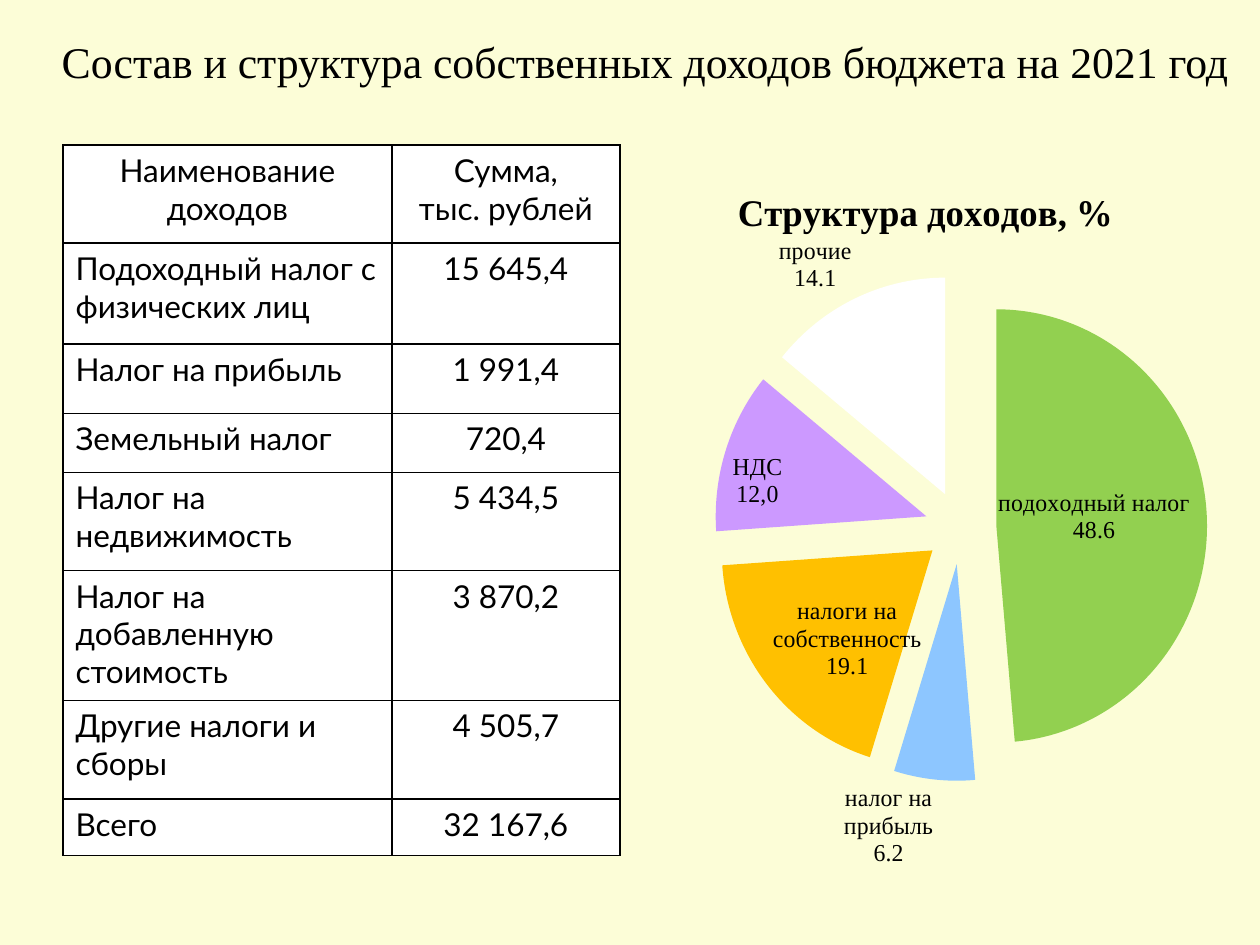
"""Build a slide with the own-revenue table and a pie of its structure."""
from lxml.etree import SubElement
from pptx import Presentation
from pptx.chart.data import CategoryChartData
from pptx.dml.color import RGBColor
from pptx.enum.chart import XL_CHART_TYPE as ChartType, XL_LABEL_POSITION as LabelPosition
from pptx.enum.text import MSO_ANCHOR as Anchor, PP_ALIGN as Align
from pptx.oxml.ns import qn
from pptx.util import Inches, Pt

TITLE = "Состав и структура собственных доходов бюджета на 2021 год"
ROWS = [
    ("Наименование доходов", "Сумма,\nтыс. рублей", 0.78),
    ("Подоходный налог с физических лиц", "15 645,4", 0.8),
    ("Налог на прибыль", "1 991,4", 0.55),
    ("Земельный налог", "720,4", 0.47),
    ("Налог на недвижимость", "5 434,5", 0.78),
    ("Налог на добавленную стоимость", "3 870,2", 1.03),
    ("Другие налоги и сборы", "4 505,7", 0.78),
    ("Всего", "32 167,6", 0.45),
]
COLUMN_WIDTHS = (2.61, 1.81)
CHART_TITLE = "Структура доходов, %"
INSIDE, OUTSIDE = LabelPosition.INSIDE_END, LabelPosition.OUTSIDE_END
SLICES = [
    ("подоходный налог", 48.6, "92D050", INSIDE, None),
    ("налог на прибыль", 6.2, "8DC6FF", OUTSIDE, None),
    ("налоги на собственность", 19.1, "FFC000", INSIDE, None),
    ("НДС", 12, "CC99FF", INSIDE, "НДС\n12,0"),
    ("прочие", 14.1, "FFFFFF", OUTSIDE, None),
]
EXPLOSION = 17
THEME = {
    "background": "FCFDD7", "ink": "000000", "cell": "FFFFFF",
    "serif": "Times New Roman", "sans": "Lato",
    "title": 25, "table": 18, "chart_title": 21.6, "label": 14, "border": 1,
}


def color(name):
    return RGBColor.from_string(THEME.get(name, name))


def style_font(font, face, size, bold=False):
    font.name, font.size, font.bold = THEME[face], Pt(THEME[size]), bold
    font.color.rgb = color("ink")


def fill_solid(target, name):
    target.fill.solid()
    target.fill.fore_color.rgb = color(name)


def add_borders(cell):
    properties = cell._tc.get_or_add_tcPr()
    for index, side in enumerate(("lnL", "lnR", "lnT", "lnB")):
        line = properties.makeelement(qn(f"a:{side}"), {"w": str(Pt(THEME["border"]))})
        fill = SubElement(line, qn("a:solidFill"))
        SubElement(fill, qn("a:srgbClr"), val=THEME["ink"])
        properties.insert(index, line)


def set_layout(parent, index, **fractions):
    for old in parent.findall(qn("c:layout")):
        parent.remove(old)
    layout = parent.makeelement(qn("c:layout"), {})
    manual = SubElement(layout, qn("c:manualLayout"))
    if "w" in fractions:
        SubElement(manual, qn("c:layoutTarget"), val="inner")
    for axis in ("x", "y"):
        SubElement(manual, qn(f"c:{axis}Mode"), val="edge")
    for key, value in fractions.items():
        SubElement(manual, qn(f"c:{key}"), val=str(value))
    parent.insert(index, layout)


def add_title(slide):
    title = slide.shapes.title
    title.left, title.top = Inches(0.22), Inches(0.13)
    title.width, title.height = Inches(9.8), Inches(0.71)
    frame = title.text_frame
    frame.text, frame.vertical_anchor = TITLE, Anchor.MIDDLE
    para = frame.paragraphs[0]
    para.alignment = Align.CENTER
    style_font(para.font, "serif", "title")


def add_revenue_table(slide):
    table = slide.shapes.add_table(
        len(ROWS), len(COLUMN_WIDTHS), Inches(0.5), Inches(1.15),
        Inches(sum(COLUMN_WIDTHS)), Inches(sum(row[-1] for row in ROWS))).table
    for column, width in zip(table.columns, COLUMN_WIDTHS):
        column.width = Inches(width)
    for row_index, (*texts, height) in enumerate(ROWS):
        table.rows[row_index].height = Inches(height)
        for column_index, text in enumerate(texts):
            cell = table.cell(row_index, column_index)
            cell.text = text
            fill_solid(cell, "cell")
            add_borders(cell)
            centred = row_index == 0 or column_index == 1
            for para in cell.text_frame.paragraphs:
                para.alignment = Align.CENTER if centred else Align.LEFT
                style_font(para.font, "sans", "table")


def style_slice(series, index, fill, position, custom):
    point = series.points[index]
    fill_solid(point.format, fill)
    dot = series._element.findall(qn("c:dPt"))[index]
    explosion = dot.makeelement(qn("c:explosion"), {"val": str(EXPLOSION)})
    dot.find(qn("c:spPr")).addprevious(explosion)
    label = point.data_label
    if custom:
        label.text_frame.text = custom
        for para in label.text_frame.paragraphs:
            style_font(para.font, "serif", "label")
            for run in para.runs:
                style_font(run.font, "serif", "label")
    else:
        style_font(label.font, "serif", "label")
    label.position = position
    element = series._element.find(qn("c:dLbls")).findall(qn("c:dLbl"))[index]
    element.find(qn("c:showCatName")).set("val", "1")
    SubElement(element, qn("c:separator")).text = " "


def add_structure_chart(slide):
    data = CategoryChartData()
    data.categories = [item[0] for item in SLICES]
    data.add_series("Series 1", [item[1] for item in SLICES])
    chart = slide.shapes.add_chart(
        ChartType.PIE, Inches(5.16), Inches(1.15), Inches(4.42), Inches(5.75), data).chart
    style_font(chart.font, "sans", "table")
    chart.has_legend = False
    chart.has_title = True
    frame = chart.chart_title.text_frame
    frame.text = CHART_TITLE
    style_font(frame.paragraphs[0].font, "serif", "chart_title", bold=True)
    style_font(frame.paragraphs[0].runs[0].font, "serif", "chart_title", bold=True)
    plot = chart.plots[0]
    plot.vary_by_categories = True
    for index, (_, _, *look) in enumerate(SLICES):
        style_slice(plot.series[0], index, *look)
    body = chart._chartSpace.find(qn("c:chart"))
    set_layout(body.find(qn("c:title")), 1, x=0.15, y=0.05)
    set_layout(body.find(qn("c:plotArea")), 0, x=0.18, y=0.23, w=0.79, h=0.6)


def main():
    deck = Presentation()
    deck.slide_width, deck.slide_height = Inches(10), Inches(7.5)
    slide = deck.slides.add_slide(deck.slide_layouts[5])
    fill_solid(slide.background, "background")
    add_title(slide)
    add_revenue_table(slide)
    add_structure_chart(slide)
    deck.save("out.pptx")


if __name__ == "__main__":
    main()
